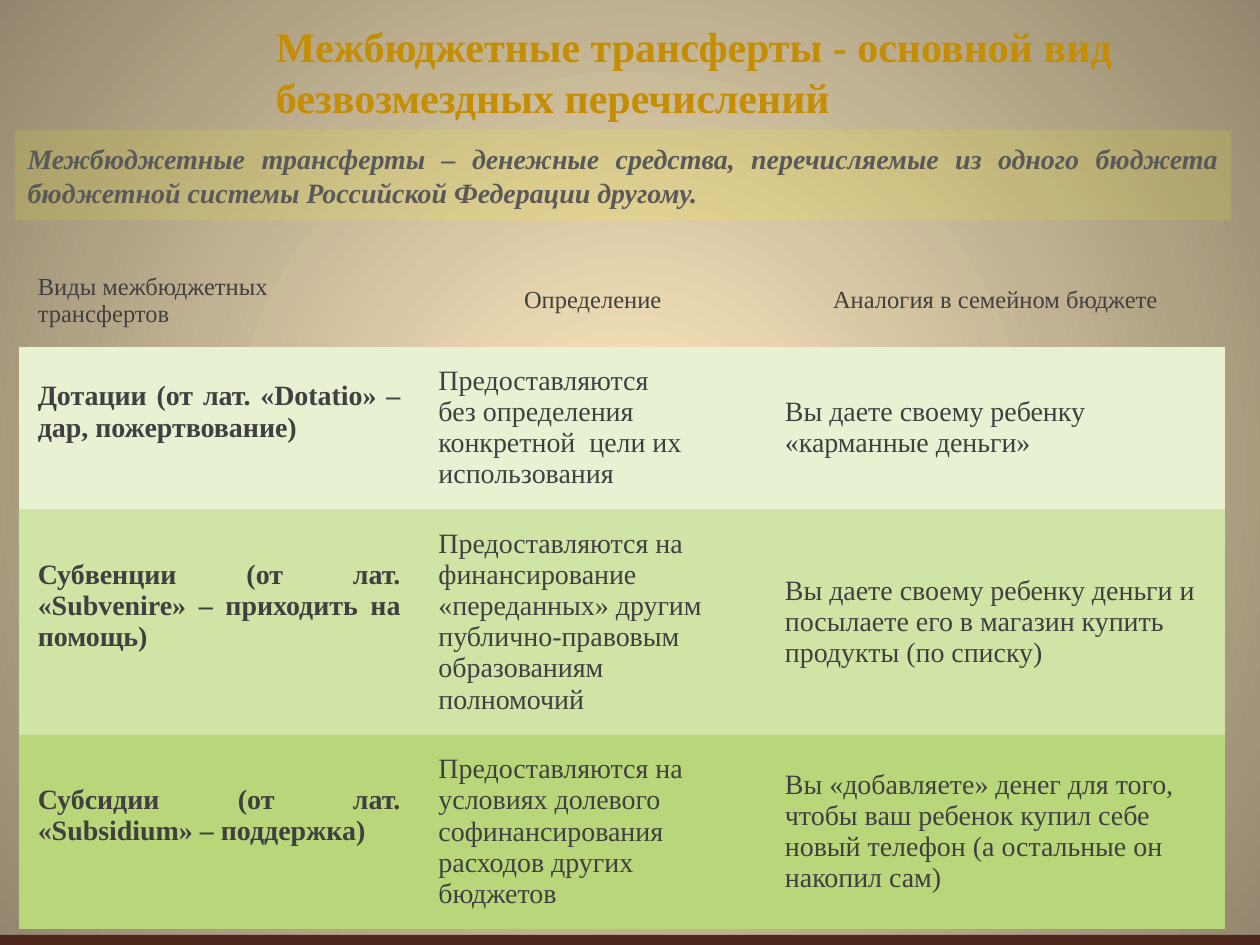
from lxml import etree
from pptx import Presentation
from pptx.dml.color import RGBColor
from pptx.enum.shapes import MSO_SHAPE
from pptx.enum.text import MSO_ANCHOR, PP_ALIGN
from pptx.oxml import parse_xml
from pptx.oxml.ns import nsdecls, qn
from pptx.util import Inches, Pt

RECTANGLE = MSO_SHAPE.RECTANGLE
MIDDLE = MSO_ANCHOR.MIDDLE
LEFT, CENTER, JUSTIFY = PP_ALIGN.LEFT, PP_ALIGN.CENTER, PP_ALIGN.JUSTIFY

FONT = "Times New Roman"
GOLD = RGBColor(0xC5, 0x8D, 0x01)
BROWN = RGBColor(0x4F, 0x27, 0x1C)
YELLOW = RGBColor(0xFF, 0xFF, 0x00)
GRAY = RGBColor(0x59, 0x59, 0x59)
DARK = RGBColor(0x40, 0x40, 0x40)
CREAM = RGBColor(0xFF, 0xEC, 0xC2)
KHAKI = RGBColor(0x92, 0x87, 0x6E)
ROW_FILLS = [None, RGBColor(0xE8, 0xF2, 0xD3), RGBColor(0xD0, 0xE4, 0xA6),
             RGBColor(0xB9, 0xD7, 0x7A)]
NO_GRID_STYLE = "{2D5ABB26-0587-4C30-8999-92F81FD0307C}"

TITLE = ["Межбюджетные трансферты - основной вид", "безвозмездных перечислений"]
DEFINITION = ["Межбюджетные трансферты – денежные средства, перечисляемые из одного "
              "бюджета бюджетной системы Российской Федерации другому."]
COLUMN_WIDTHS = [3.18, 2.75, 3.64]
ROW_HEIGHTS = [0.5, 1.29, 1.79, 1.54]
CELL_MARGIN = 0.15
NAME_BOTTOM_MARGIN = 0.4
ROWS = [
    [["Виды межбюджетных трансфертов"], ["Определение"], ["Аналогия в семейном бюджете"]],
    [["Дотации (от лат. «Dotatio» – дар, пожертвование)"],
     ["Предоставляются", "без определения", "конкретной  цели их", "использования"],
     ["Вы даете своему ребенку", "«карманные деньги»"]],
    [["Субвенции (от лат. «Subvenire» – приходить на помощь)"],
     ["Предоставляются на", "финансирование",
      "«переданных» другим публично-правовым образованиям полномочий"],
     ["Вы даете своему ребенку деньги и", "посылаете его в магазин купить",
      "продукты (по списку)"]],
    [["Субсидии (от лат. «Subsidium» – поддержка)"],
     ["Предоставляются на", "условиях долевого софинансирования расходов других бюджетов"],
     ["Вы «добавляете» денег для того,", "чтобы ваш ребенок купил себе",
      "новый телефон (а остальные он", "накопил сам)"]],
]


def set_background(slide):
    """Fill the slide with a gradient that darkens from its centre."""
    slide.background.fill.solid()
    properties = slide.background.fill._xPr
    properties.replace(properties.find(qn("a:solidFill")), parse_xml(
        f'<a:gradFill {nsdecls("a")} rotWithShape="1"><a:gsLst>'
        f'<a:gs pos="0"><a:srgbClr val="{CREAM}"/></a:gs>'
        f'<a:gs pos="100000"><a:srgbClr val="{KHAKI}"/></a:gs></a:gsLst>'
        '<a:path path="circle"><a:fillToRect l="50000" t="50000" r="50000" b="50000"/>'
        '</a:path></a:gradFill>'))


def write_text(text_frame, lines, size, color, alignment=LEFT, bold=False, italic=False):
    """Write each line as a paragraph with one formatted run."""
    for index, line in enumerate(lines):
        paragraph = text_frame.add_paragraph() if index else text_frame.paragraphs[0]
        paragraph.alignment = alignment
        paragraph.space_before = Pt(0)
        run = paragraph.add_run()
        run.text = line
        run.font.name = FONT
        run.font.size = Pt(size)
        run.font.bold = bold
        run.font.italic = italic
        run.font.color.rgb = color


def add_title(slide):
    """Place and format the title placeholder."""
    title = slide.shapes.title
    title.left, title.top = Inches(2.09), Inches(0.21)
    title.width, title.height = Inches(7.17), Inches(0.71)
    title.text_frame.vertical_anchor = MIDDLE
    write_text(title.text_frame, TITLE, 24, GOLD, bold=True)


def add_rectangle(slide, left, top, width, height, color, opacity=100):
    """Add a borderless rectangle with an opacity in percent."""
    shape = slide.shapes.add_shape(
        RECTANGLE, Inches(left), Inches(top), Inches(width), Inches(height))
    shape.shadow.inherit = False
    shape.line.fill.background()
    shape.fill.solid()
    shape.fill.fore_color.rgb = color
    if opacity < 100:
        color_element = shape._element.spPr.find(qn("a:solidFill"))[0]
        etree.SubElement(color_element, qn("a:alpha"), val=str(opacity * 1000))
    return shape


def add_definition(slide):
    """Add the translucent band with the definition."""
    band = add_rectangle(slide, 0.12, 1.03, 9.65, 0.72, YELLOW, 12)
    band.text_frame.word_wrap = True
    band.text_frame.vertical_anchor = MIDDLE
    write_text(band.text_frame, DEFINITION, 16, GRAY, JUSTIFY, bold=True, italic=True)


def fill_cell(cell, lines, row, column):
    """Format one table cell by its row and column."""
    cell.vertical_anchor = MIDDLE
    cell.margin_left = cell.margin_right = Inches(CELL_MARGIN)
    cell.margin_top = cell.margin_bottom = Inches(CELL_MARGIN)
    if row == 0:
        cell.fill.background()
        write_text(cell.text_frame, lines, 14, DARK, CENTER if column else LEFT)
        return
    cell.fill.solid()
    cell.fill.fore_color.rgb = ROW_FILLS[row]
    if column == 0:
        cell.margin_bottom = Inches(NAME_BOTTOM_MARGIN)
    alignment = LEFT if column == 1 else JUSTIFY
    write_text(cell.text_frame, lines, 16, DARK, alignment, bold=column == 0)


def add_transfer_table(slide):
    """Add the table of transfer kinds."""
    frame = slide.shapes.add_table(
        len(ROWS), len(COLUMN_WIDTHS), Inches(0.15), Inches(2.02),
        Inches(sum(COLUMN_WIDTHS)), Inches(sum(ROW_HEIGHTS)))
    table = frame.table
    table.first_row = table.horz_banding = False
    table._tbl.tblPr.find(qn("a:tableStyleId")).text = NO_GRID_STYLE
    for column, width in zip(table.columns, COLUMN_WIDTHS):
        column.width = Inches(width)
    for row, height in zip(table.rows, ROW_HEIGHTS):
        row.height = Inches(height)
    for row, texts in enumerate(ROWS):
        for column, lines in enumerate(texts):
            fill_cell(table.cell(row, column), lines, row, column)


def main():
    """Build and save the slide."""
    presentation = Presentation()
    presentation.slide_width, presentation.slide_height = Inches(10), Inches(7.5)
    slide = presentation.slides.add_slide(presentation.slide_layouts[5])
    set_background(slide)
    add_rectangle(slide, 0, 7.42, 10, 0.08, BROWN)
    add_transfer_table(slide)
    add_definition(slide)
    add_title(slide)
    presentation.save("out.pptx")


if __name__ == "__main__":
    main()
